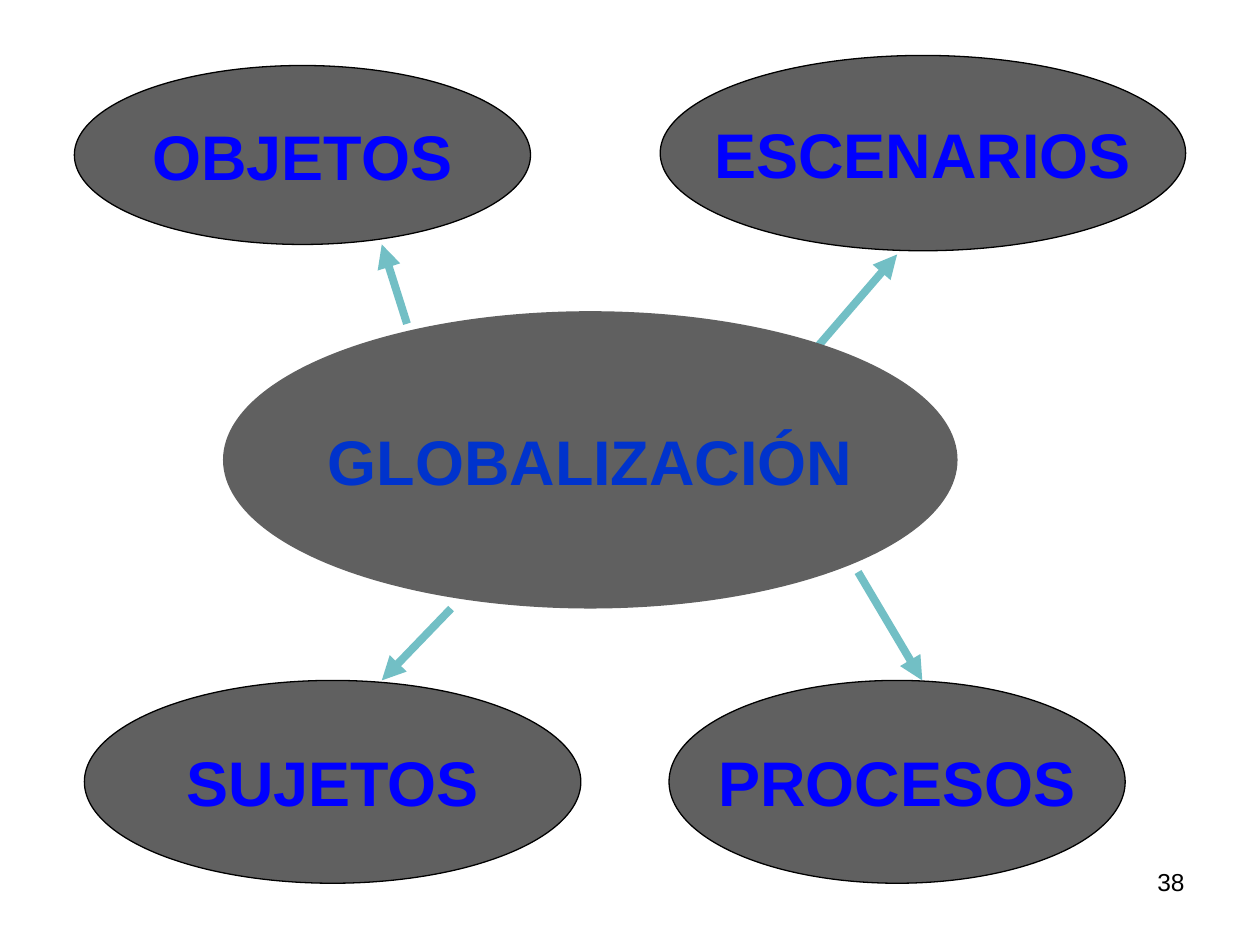
from lxml import etree
from pptx import Presentation
from pptx import util as u
from pptx.dml.color import RGBColor
from pptx.enum import shapes, text
from pptx.oxml.ns import qn

# Content: label, left, top, width, height
CENTRE = ("GLOBALIZACIÓN", 1.77, 2.47, 5.83, 2.36)
TOPICS = [
    ("ESCENARIOS", 5.24, 0.44, 4.17, 1.55),
    ("OBJETOS", 0.59, 0.52, 3.62, 1.42),
    ("SUJETOS", 0.67, 5.4, 3.94, 1.61),
    ("PROCESOS", 5.31, 5.4, 3.62, 1.61),
]
# Arrows: start x, y, end x, y
ARROWS = [
    (3.23, 2.57, 3.03, 1.94),
    (6.49, 2.75, 7.12, 2.02),
    (3.58, 4.83, 3.03, 5.4),
    (6.81, 4.54, 7.32, 5.4),
]
PAGE = ("38", 7.17, 6.83, 2.33, 0.52)

THEME = {
    "fill": RGBColor(0x60, 0x60, 0x60),
    "outline": RGBColor(0, 0, 0),
    "arrow": RGBColor(0x72, 0xBF, 0xC5),
    "centre": {"name": "Arial", "size": u.Pt(36), "bold": True, "color": RGBColor(0, 0x33, 0xCC)},
    "topic": {"name": "Arial", "size": u.Pt(36), "bold": True, "color": RGBColor(0, 0, 0xFF)},
    "page": {"name": "Arial", "size": u.Pt(14), "bold": False, "color": RGBColor(0, 0, 0)},
}


def write(sp, label, style, align, wrap):
    tf = sp.text_frame
    tf.word_wrap = wrap
    p = tf.paragraphs[0]
    p.alignment = align
    r = p.add_run()
    r.text = label
    for key, value in THEME[style].items():
        if key == "color":
            r.font.color.rgb = value
        else:
            setattr(r.font, key, value)
    return tf


def add_ellipse(s, item, style, outlined):
    label, *box = item
    sp = s.shapes.add_shape(shapes.MSO_SHAPE.OVAL, *map(u.Inches, box))
    sp.shadow.inherit = False
    sp.fill.solid()
    sp.fill.fore_color.rgb = THEME["fill"]
    if outlined:
        sp.line.color.rgb = THEME["outline"]
        sp.line.width = u.Pt(0.75)
    else:
        sp.line.fill.background()
    tf = write(sp, label, style, text.PP_ALIGN.CENTER, False)
    tf.vertical_anchor = text.MSO_ANCHOR.MIDDLE


def add_arrow(s, ends):
    cx = s.shapes.add_connector(shapes.MSO_CONNECTOR.STRAIGHT, *map(u.Inches, ends))
    cx.line.color.rgb = THEME["arrow"]
    cx.line.width = u.Pt(4.5)
    etree.SubElement(cx.line._get_or_add_ln(), qn("a:tailEnd"), type="triangle")
    etree.SubElement(cx._element.spPr, qn("a:effectLst"))


def main():
    prs = Presentation()
    prs.slide_width, prs.slide_height = u.Inches(10), u.Inches(7.5)
    s = prs.slides.add_slide(prs.slide_layouts[6])

    # Arrows go behind the ellipses
    for ends in ARROWS:
        add_arrow(s, ends)

    # Central idea and its topics
    add_ellipse(s, CENTRE, "centre", False)
    for item in TOPICS:
        add_ellipse(s, item, "topic", True)

    # Page number
    label, *box = PAGE
    tb = s.shapes.add_textbox(*map(u.Inches, box))
    write(tb, label, "page", text.PP_ALIGN.RIGHT, True)

    prs.save("out.pptx")


if __name__ == "__main__":
    main()
